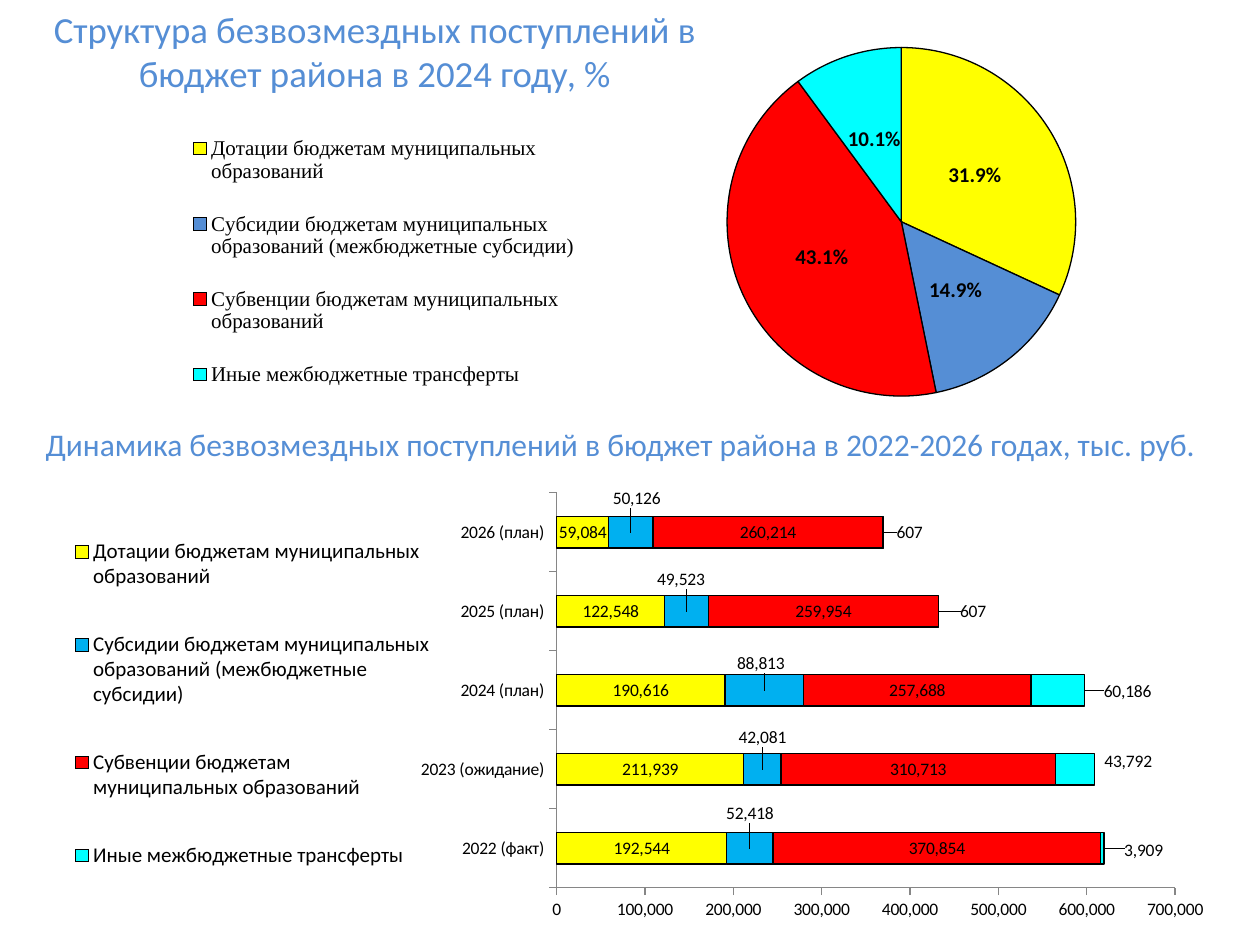
from lxml import etree
from pptx import Presentation
from pptx.chart.data import CategoryChartData
from pptx.dml.color import RGBColor
from pptx.enum.chart import (XL_CHART_TYPE, XL_LABEL_POSITION,
                             XL_LEGEND_POSITION, XL_TICK_MARK)
from pptx.enum.text import MSO_ANCHOR, MSO_AUTO_SIZE, PP_ALIGN
from pptx.oxml.ns import qn
from pptx.util import Inches, Pt

BAR, PIE = XL_CHART_TYPE.BAR_STACKED, XL_CHART_TYPE.PIE
MID, END = XL_LABEL_POSITION.CENTER, XL_LABEL_POSITION.INSIDE_END
LEFT = XL_LEGEND_POSITION.LEFT
OUT, NONE = XL_TICK_MARK.OUTSIDE, XL_TICK_MARK.NONE
CENTER, MIDDLE = PP_ALIGN.CENTER, MSO_ANCHOR.MIDDLE
C15 = "http://schemas.microsoft.com/office/drawing/2012/chart"

COLORS = {"white": "FFFFFF", "black": "000000", "blue": "558ED5",
          "yellow": "FFFF00", "sky": "00B0F0", "red": "FF0000",
          "cyan": "00FFFF", "gray": "868686"}
KINDS = ["Дотации бюджетам муниципальных образований",
         "Субсидии бюджетам муниципальных образований (межбюджетные субсидии)",
         "Субвенции бюджетам муниципальных образований",
         "Иные межбюджетные трансферты"]
SHARES = [0.319, 0.149, 0.431, 0.101]
YEARS = ["2022 (факт)", "2023 (ожидание)", "2024 (план)",
         "2025 (план)", "2026 (план)"]
SUMS = [[192544, 211939, 190616, 122548, 59084],
        [52418, 42081, 88813, 49523, 50126],
        [370854, 310713, 257688, 259954, 260214],
        [3909, 43792, 60186, 607, 607]]
# Label shifts by series, as shares of the chart's size
SHIFTS = {1: [(0, -0.076), (0, -0.07), (-0.003, -0.06),
              (-0.005, -0.07), (0.005, -0.075)],
          3: [(0.055, 0.005), (0.054, -0.017), (0.062, 0.002),
              (0.045, 0.002), (0.038, 0)]}


def color(name):
    return RGBColor.from_string(COLORS[name])


def paint(form, fill, line="black"):
    form.fill.solid()
    form.fill.fore_color.rgb = color(fill)
    form.line.color.rgb = color(line)
    form.line.width = Pt(0.75)


def style(font, size, face="Calibri", tone="black", bold=False):
    font.size, font.name, font.bold = Pt(size), face, bold
    font.color.rgb = color(tone)


def write(shape, text, size, tone="blue"):
    """Fill a shape with one centred, outlined paragraph."""
    shape.fill.solid()
    shape.fill.fore_color.rgb = color("white")
    frame = shape.text_frame
    frame.word_wrap, frame.auto_size = True, MSO_AUTO_SIZE.NONE
    frame.vertical_anchor = MIDDLE
    para = frame.paragraphs[0]
    para.alignment = CENTER
    run = para.add_run()
    run.text = text
    style(run.font, size, tone=tone)
    line = etree.Element(qn("a:ln"), w=str(Pt(0.75)))
    solid = etree.SubElement(line, qn("a:solidFill"))
    etree.SubElement(solid, qn("a:srgbClr"), val=COLORS[tone])
    run.font._element.insert(0, line)


def layout(parent, spot, after, inner=False, edge=True):
    """Place a chart part by hand, after the child with the given tag."""
    old = parent.find(qn("c:layout"))
    if old is not None:
        parent.remove(old)
    node = etree.Element(qn("c:layout"))
    hand = etree.SubElement(node, qn("c:manualLayout"))
    items = [("layoutTarget", "inner")] if inner else []
    if edge:
        items += [("xMode", "edge"), ("yMode", "edge")]
    items += zip("xywh", spot)
    for tag, val in items:
        etree.SubElement(hand, qn("c:" + tag), val=str(val))
    mark = parent.find(qn(after)) if after else None
    parent.insert(0 if mark is None else parent.index(mark) + 1, node)


def unlead(tags):
    """Switch off the leader lines of moved labels."""
    exts = etree.SubElement(tags._element, qn("c:extLst"))
    ext = etree.SubElement(exts, qn("c:ext"), nsmap={"c15": C15},
                           uri="{CE6537A1-D6FC-4f65-9D91-7224C49458BB}")
    etree.SubElement(ext, f"{{{C15}}}showLeaderLines", val="0")


def add_chart(slide, box, kind, data, plot, key, face="Calibri"):
    chart = slide.shapes.add_chart(kind, *map(Inches, box), data).chart
    chart.has_title = False
    style(chart.font, 10)
    chart.has_legend = True
    legend = chart.legend
    legend.position, legend.include_in_layout = LEFT, False
    style(legend.font, 12, face)
    layout(legend._element, key, "c:legendPos")
    layout(chart._chartSpace.chart.plotArea, plot, None, inner=True)
    return chart


def label(series, form, place, **font):
    tags = series.data_labels
    tags.show_value, tags.position = True, place
    tags.number_format, tags.number_format_is_linked = form, False
    style(tags.font, **font)


def bar_part(slide, box):
    data = CategoryChartData(number_format="#,##0")
    data.categories = YEARS
    for name, vals in zip(KINDS, SUMS):
        data.add_series(name, vals)
    chart = add_chart(slide, box, BAR, data, (0.433, 0.042, 0.533, 0.876),
                      (0.014, 0.05, 0.314, 0.92))
    plot = chart.plots[0]
    plot.gap_width, plot.overlap = 150, 100
    for axis in (chart.category_axis, chart.value_axis):
        axis.has_major_gridlines = False
        axis.major_tick_mark, axis.minor_tick_mark = OUT, NONE
        axis.format.line.color.rgb = color("gray")
        style(axis.tick_labels.font, 10)
    scale = chart.value_axis
    scale.minimum_scale, scale.maximum_scale = 0, 700000
    scale.major_unit = 100000
    scale.tick_labels.number_format = "#,##0"
    scale.tick_labels.number_format_is_linked = False
    fills = ["yellow", "sky", "red", "cyan"]
    for i, (series, fill) in enumerate(zip(plot.series, fills)):
        paint(series.format, fill)
        place = END if i == 3 else MID
        label(series, "#,##0", place, size=10)
        # Move the labels of narrow segments off the bars
        for j, shift in enumerate(SHIFTS.get(i, [])):
            tag = series.points[j].data_label
            tag.position = place
            node = series.data_labels._element.findall(qn("c:dLbl"))[j]
            layout(node, shift, "c:idx", edge=False)
        unlead(series.data_labels)


def pie_part(slide, box):
    data = CategoryChartData(number_format="0.0%")
    data.categories = KINDS
    data.add_series("Series 1", SHARES)
    chart = add_chart(slide, box, PIE, data, (0.534, 0.076, 0.412, 0.642),
                      (0.128, 0.185, 0.34, 0.57), "Times New Roman")
    plot = chart.plots[0]
    plot.vary_by_categories = True
    series = plot.series[0]
    for i, fill in enumerate(["yellow", "blue", "red", "cyan"]):
        paint(series.points[i].format, fill)
    label(series, "0.0%", MID, size=12, bold=True)


def main():
    deck = Presentation()
    deck.slide_width, deck.slide_height = Inches(10), Inches(7.5)
    slide = deck.slides.add_slide(deck.slide_layouts[5])
    # Headings
    title = slide.shapes.title
    title.left, title.top = Inches(0.12), Inches(0.13)
    title.width, title.height = Inches(5.71), Inches(0.55)
    write(title, "Структура безвозмездных поступлений в бюджет района "
          "в 2024 году, %", 21)
    head = slide.shapes.add_textbox(*map(Inches, (0.2, 3.29, 9.45, 0.47)))
    write(head, "Динамика безвозмездных поступлений в бюджет района "
          "в 2022-2026 годах, тыс. руб.", 18)
    # Charts
    bar_part(slide, (0.43, 3.76, 9.21, 3.58))
    pie_part(slide, (0.28, 0.05, 9.29, 4.31))
    deck.save("out.pptx")


if __name__ == "__main__":
    main()
